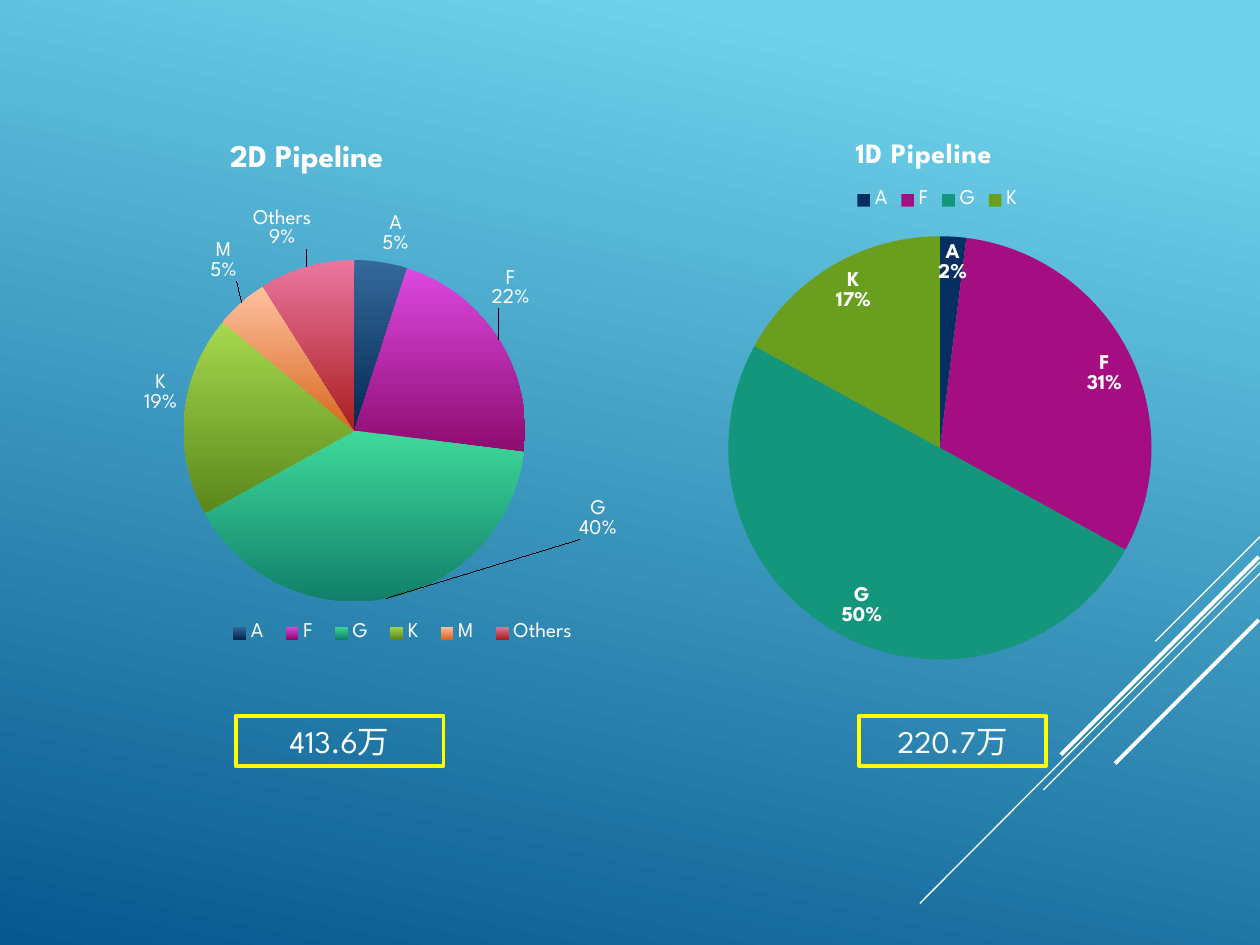
from pptx import Presentation
from pptx.chart.data import CategoryChartData
from pptx.dml.color import RGBColor
from pptx.enum.chart import XL_CHART_TYPE as ChartType
from pptx.enum.chart import XL_LABEL_POSITION as LabelPosition
from pptx.enum.chart import XL_LEGEND_POSITION as LegendPosition
from pptx.enum.shapes import MSO_CONNECTOR as Connector
from pptx.enum.shapes import MSO_SHAPE as Shape
from pptx.enum.text import MSO_ANCHOR as Anchor
from pptx.enum.text import PP_ALIGN as Align
from pptx.oxml import parse_xml
from pptx.oxml.ns import nsdecls, qn
from pptx.util import Inches, Pt

FONT = "League Spartan"
WHITE = RGBColor(0xFF, 0xFF, 0xFF)
YELLOW = RGBColor(0xFF, 0xFF, 0x00)
SKY = RGBColor(0x6E, 0xD2, 0xEB)
DEEP_BLUE = RGBColor(0x06, 0x58, 0x8E)
NAVY = RGBColor(0x05, 0x2F, 0x61)
MAGENTA = RGBColor(0xA5, 0x0E, 0x82)
TEAL = RGBColor(0x14, 0x96, 0x7C)
OLIVE = RGBColor(0x6A, 0x9E, 0x1F)
FLAT_SLICES = [NAVY, MAGENTA, TEAL, OLIVE]
SHADED_SLICES = [
    (RGBColor(0x35, 0x69, 0x9B), RGBColor(0x04, 0x28, 0x53)),
    (RGBColor(0xDC, 0x48, 0xE1), RGBColor(0x8D, 0x0C, 0x6F)),
    (RGBColor(0x3F, 0xD9, 0x9B), RGBColor(0x11, 0x80, 0x6A)),
    (RGBColor(0xA6, 0xD9, 0x4E), RGBColor(0x5B, 0x87, 0x1B)),
    (RGBColor(0xFF, 0xC1, 0xA0), RGBColor(0xD7, 0x68, 0x1F)),
    (RGBColor(0xEA, 0x76, 0xA0), RGBColor(0xAA, 0x1E, 0x1F)),
]
RAYS = [
    ((10, 4.26), (9.17, 5.09), 0.75),
    ((10, 4.46), (7.3, 7.17), 0.75),
    ((10, 4.55), (8.28, 6.27), 0.75),
    ((9.99, 4.42), (8.42, 5.99), 2.25),
    ((9.99, 4.92), (8.85, 6.06), 2.25),
]


def style_font(font, size, bold=False):
    font.name = FONT
    font.size = Pt(size)
    font.bold = bold
    font.color.rgb = WHITE


def fill_gradient(fill, colours, angle, start=0):
    fill.gradient()
    fill.gradient_angle = 360 - angle
    for stop, colour, position in zip(fill.gradient_stops, colours, (start, 1)):
        stop.color.rgb = colour
        stop.position = position


def layout_xml(x, y, width=None, height=None, edge=True, inner=False):
    parts = ['<c:layoutTarget val="inner"/>'] if inner else []
    if edge:
        parts += ['<c:xMode val="edge"/>', '<c:yMode val="edge"/>']
    sizes = {"x": x, "y": y, "w": width, "h": height}
    parts += [f'<c:{key} val="{value}"/>' for key, value in sizes.items() if value is not None]
    return f'<c:layout {nsdecls("c")}><c:manualLayout>{"".join(parts)}</c:manualLayout></c:layout>'


def place(element, layout, after=None, **options):
    for old in element.findall(qn("c:layout")):
        element.remove(old)
    new = parse_xml(layout_xml(*layout, **options))
    if after:
        element.find(qn(after)).addnext(new)
    else:
        element.insert(0, new)


def add_title(chart, text, size, layout, spacing):
    chart.has_title = True
    title = chart.chart_title
    span = title.text_frame.paragraphs[0].add_run()
    span.text = text
    style_font(span.font, size, bold=True)
    span.font._element.set("spc", str(spacing))
    place(title._element, layout, after="c:tx")


def add_legend(chart, position, layout):
    chart.has_legend = True
    legend = chart.legend
    legend.position = position
    legend.include_in_layout = False
    style_font(legend.font, 12)
    place(legend._element, layout, after="c:legendPos")


def label_slices(series, position, bold, offsets):
    labels = series.data_labels
    labels.show_value = False
    labels.show_category_name = True
    labels.show_percentage = True
    labels.position = position
    style_font(labels.font, 12, bold)
    element = labels._element
    separator = parse_xml(f'<c:separator {nsdecls("c")}>\n</c:separator>')
    element.find(qn("c:showBubbleSize")).addnext(separator)
    flags = {"LegendKey": 0, "Val": 0, "CatName": 1, "SerName": 0, "Percent": 1, "BubbleSize": 0}
    shows = "".join(f'<c:show{name} val="{flag}"/>' for name, flag in flags.items())
    for order, (index, offset) in enumerate(offsets.items()):
        element.insert(order, parse_xml(
            f'<c:dLbl {nsdecls("c")}><c:idx val="{index}"/>{layout_xml(*offset, edge=False)}'
            f'<c:dLblPos val="outEnd"/>{shows}<c:separator>\n</c:separator></c:dLbl>'))


def add_pie(page, frame, categories, values, slices, plot):
    data = CategoryChartData()
    data.categories = categories
    data.add_series("Series 1", values)
    chart = page.shapes.add_chart(ChartType.PIE, *map(Inches, frame), data).chart
    style_font(chart.font, 10)
    chart.plots[0].vary_by_categories = True
    series = chart.plots[0].series[0]
    for index, colour in enumerate(slices):
        fill = series.points[index].format.fill
        if isinstance(colour, RGBColor):
            fill.solid()
            fill.fore_color.rgb = colour
        else:
            fill_gradient(fill, colour, 90)
    place(chart._chartSpace.chart.plotArea, plot, inner=True)
    return chart, series


def add_ray(page, start, end, weight):
    ray = page.shapes.add_connector(Connector.STRAIGHT, *map(Inches, start + end))
    ray.line.color.rgb = WHITE
    ray.line.width = Pt(weight)
    ray._element.spPr.append(parse_xml(f'<a:effectLst {nsdecls("a")}/>'))


def add_total(page, text, left, width):
    box = page.shapes.add_shape(Shape.RECTANGLE, *map(Inches, (left, 5.68, width, 0.4)))
    box.shadow.inherit = False
    box.fill.background()
    box.line.color.rgb = YELLOW
    box.line.width = Pt(2.25)
    box.text_frame.word_wrap = True
    box.text_frame.vertical_anchor = Anchor.MIDDLE
    para = box.text_frame.paragraphs[0]
    para.alignment = Align.CENTER
    span = para.add_run()
    span.text = text
    style_font(span.font, 18)


def main():
    deck = Presentation()
    deck.slide_width, deck.slide_height = Inches(10), Inches(7.5)
    page = deck.slides.add_slide(deck.slide_layouts[6])
    fill_gradient(page.background.fill, (SKY, DEEP_BLUE), 102, start=0.1)
    for ray in RAYS:
        add_ray(page, *ray)

    chart, series = add_pie(page, (0, 0.99, 5.24, 4.18), ["A", "F", "G", "K", "M", "Others"],
                            (5, 22, 40, 19, 5, 9), SHADED_SLICES, (0.12, 0.257, 0.834, 0.648))
    add_title(chart, "2D Pipeline", 18, (0.34, 0.02), spacing=0)
    add_legend(chart, LegendPosition.BOTTOM, (0.33, 0.93, 0.56, 0.07))
    label_slices(series, LabelPosition.OUTSIDE_END, False,
                 {1: (-0.02, -0.05), 2: (0.29, -0.2), 4: (0, -0.03), 5: (0.01, -0.02)})

    chart, series = add_pie(page, (4.23, 0.94, 6.46, 4.44), ["A", "F", "G", "K"],
                            (2, 31, 50, 17), FLAT_SLICES, (0.24, 0.21, 0.52, 0.758))
    add_title(chart, "1D Pipeline", 16, (0.39, 0.03), spacing=50)
    add_legend(chart, LegendPosition.TOP, (0.39, 0.12))
    label_slices(series, LabelPosition.INSIDE_END, True, {})

    add_total(page, "413.6万", 1.87, 1.65)
    add_total(page, "220.7万", 6.82, 1.48)
    deck.save("out.pptx")


if __name__ == "__main__":
    main()
